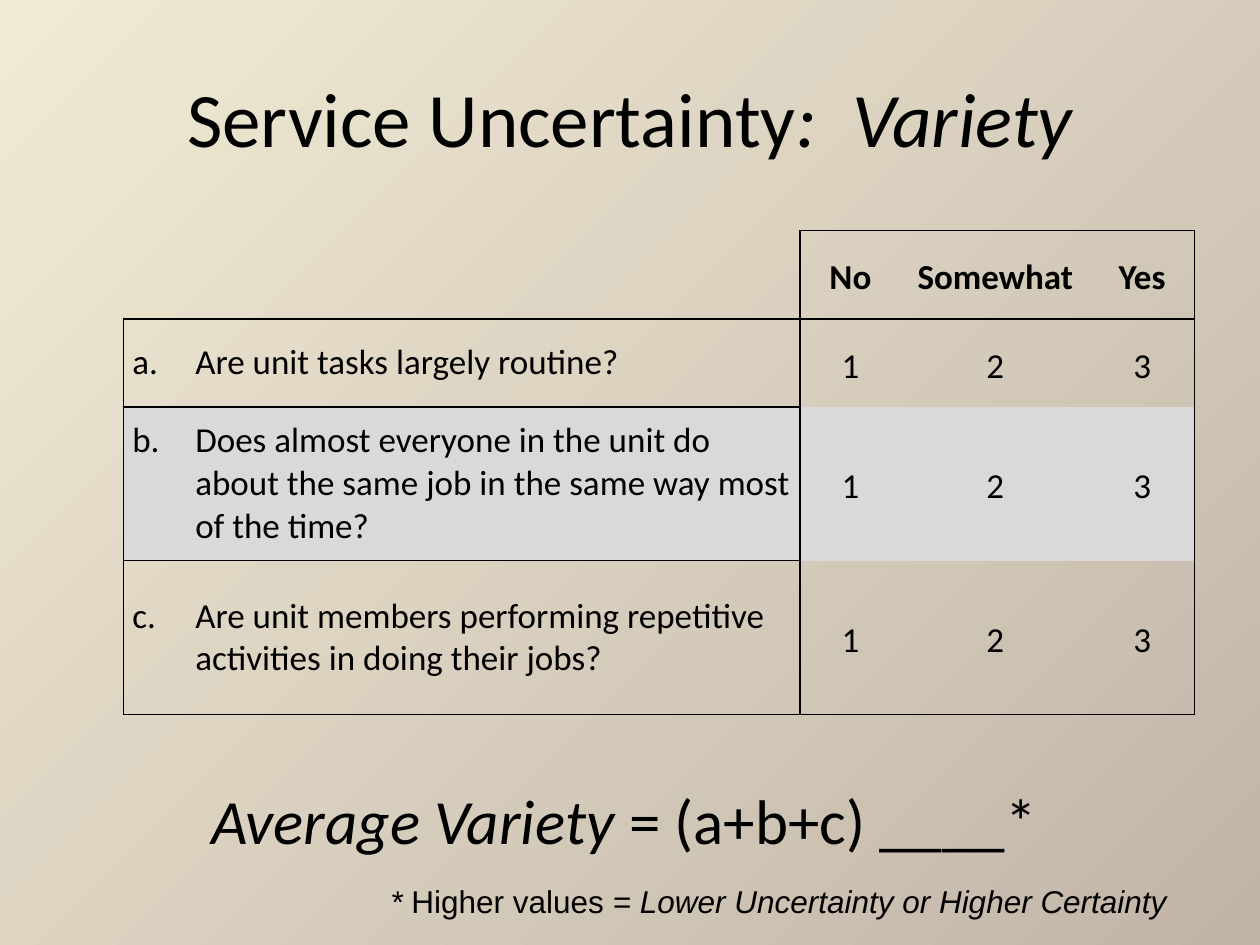
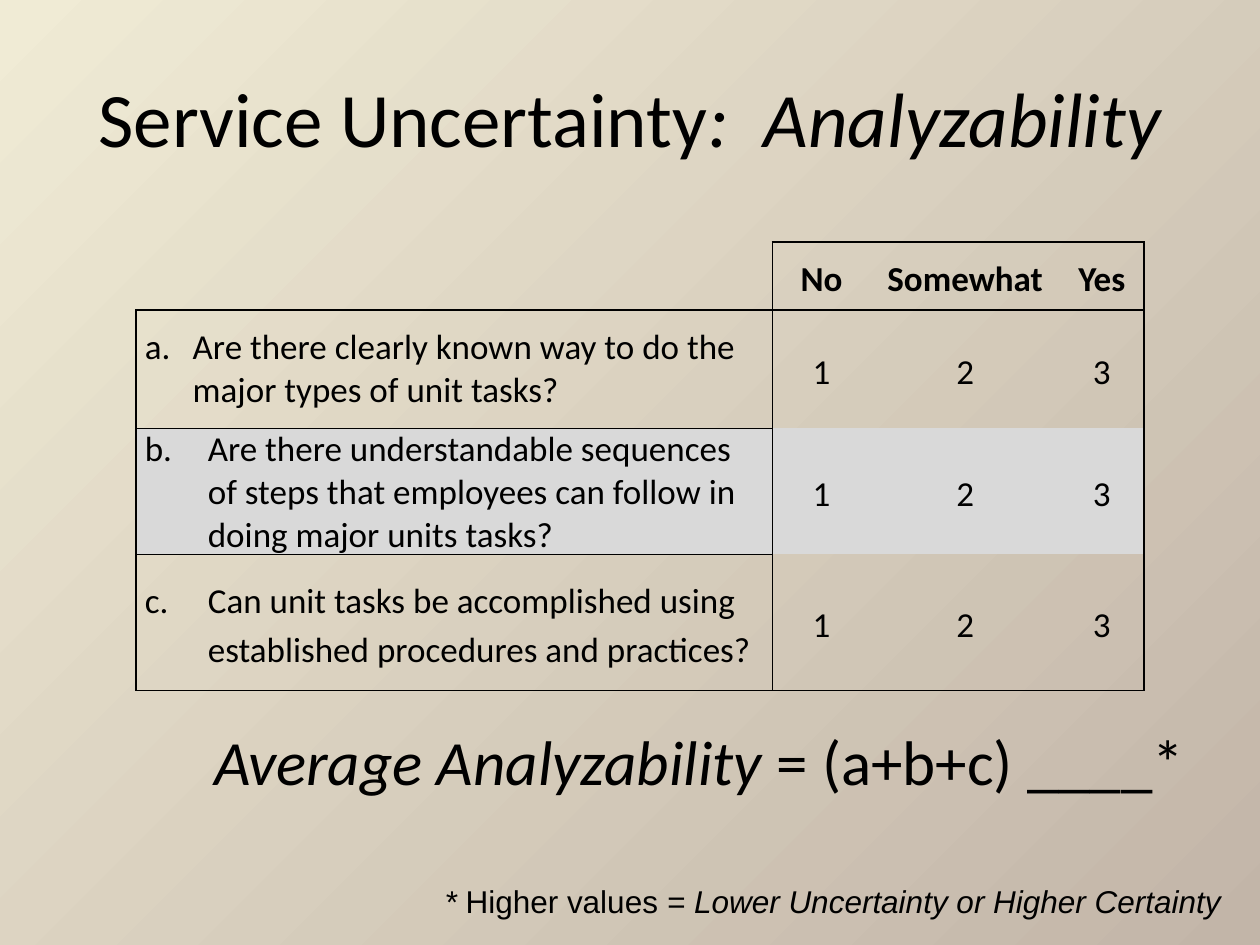
from lxml.etree import SubElement
from pptx import Presentation
from pptx.dml.color import RGBColor
from pptx.enum.text import MSO_ANCHOR, PP_ALIGN
from pptx.oxml.ns import qn
from pptx.util import Inches, Pt

BLACK = RGBColor(0x00, 0x00, 0x00)
BAND = RGBColor(0xD9, 0xD9, 0xD9)
TAUPE = RGBColor(0xC2, 0xB5, 0xA8)
CREAM = RGBColor(0xF0, 0xEB, 0xD5)

TITLE = {"name": "Calibri", "size": Pt(44)}
FORMULA = {"name": "Calibri", "size": Pt(36)}
FOOTNOTE = {"name": "Arial", "size": Pt(18)}
HEADING = {"name": "Calibri", "size": Pt(20), "bold": True}
BODY = HEADING | {"bold": False}

CELL_FORMAT = {"margin_left": Inches(0.07), "margin_right": Inches(0.07),
               "margin_top": 0, "margin_bottom": 0,
               "vertical_anchor": MSO_ANCHOR.MIDDLE}
ANSWERS = ["No", "Somewhat", "Yes"]

SCALES = [
    {
        "topic": "Variety",
        "table": (0.98, 1.83),
        "columns": [5.37, 0.8, 1.5, 0.83],
        "rows": [0.7, 0.7, 1.22, 1.22],
        "formula": (1.58, 6.15, 7.92, 0.71),
        "footnote": (3, 6.95, 6.5, 0.4),
        # question, hanging indent, line spacing
        "questions": [
            ("Are unit tasks largely routine?", 0.5, None),
            ("Does almost everyone in the unit do about the same job "
             "in the same way most of the time?", 0.5, None),
            ("Are unit members performing repetitive activities "
             "in doing their jobs?", 0.5, None),
        ],
    },
    {
        "topic": "Analyzability",
        "table": (1.08, 1.92),
        "columns": [5.05, 0.78, 1.5, 0.67],
        "rows": [0.54, 0.94, 0.94, 1.08],
        "formula": (1.6, 5.68, 7.92, 0.71),
        "footnote": (3.43, 6.95, 6.5, 0.4),
        "questions": [
            ("Are there clearly known way to do the major types "
             "of unit tasks?", 0.38, None),
            ("Are there understandable sequences of steps that employees "
             "can follow in doing major units tasks?", 0.5, None),
            ("Can unit tasks be accomplished using established procedures "
             "and practices?", 0.5, 1.15),
        ],
    },
]


def write_spans(para, spans, font_format):
    """Add (text, italic) spans that share one font format."""
    for text, italic in spans:
        span = para.add_run()
        span.text = text
        for name, value in font_format.items():
            setattr(span.font, name, value)
        span.font.italic = italic
        span.font.color.rgb = BLACK


def add_text(page, box, spans, font_format, align=PP_ALIGN.LEFT):
    frame = page.shapes.add_textbox(*map(Inches, box)).text_frame
    frame.word_wrap = True
    frame.vertical_anchor = MSO_ANCHOR.MIDDLE
    para = frame.paragraphs[0]
    para.alignment = align
    write_spans(para, spans, font_format)


def paint_background(page):
    fill = page.background.fill
    fill.gradient()
    fill.gradient_angle = 135
    for stop, color in zip(fill.gradient_stops, (TAUPE, CREAM)):
        stop.color.rgb = color


def visible_sides(row, column, last_row, last_column):
    """Frame each question fully, the answers only as a group."""
    if column == 0:
        return "RB" if row == 0 else "LRTB"
    rules = {"L": column == 1, "R": column == last_column,
             "T": row <= 1, "B": row in (0, last_row)}
    return [side for side, shown in rules.items() if shown]


def draw_borders(cell, sides):
    properties = cell._tc.get_or_add_tcPr()
    for side in "LRTB":
        line = SubElement(properties, qn(f"a:ln{side}"), w=str(Pt(1)))
        if side in sides:
            fill = SubElement(line, qn("a:solidFill"))
            SubElement(fill, qn("a:srgbClr"), val=str(BLACK))
        else:
            SubElement(line, qn("a:noFill"))


def write_question(para, number, question, indent, spacing):
    para.line_spacing = spacing
    properties = para._p.get_or_add_pPr()
    properties.set("marL", str(Inches(indent)))
    properties.set("indent", str(-Inches(indent)))
    SubElement(properties, qn("a:buAutoNum"),
               type="alphaLcPeriod", startAt=str(number))
    write_spans(para, [(question, False)], BODY)


def write_answer(para, text, font_format):
    para.alignment = PP_ALIGN.CENTER
    para.line_spacing = 1.15
    write_spans(para, [(text, False)], font_format)


def add_questionnaire(page, scale):
    columns, rows = scale["columns"], scale["rows"]
    box = (*scale["table"], sum(columns), sum(rows))
    table = page.shapes.add_table(len(rows), len(columns),
                                  *map(Inches, box)).table
    for column, width in zip(table.columns, columns):
        column.width = Inches(width)
    for row, height in zip(table.rows, rows):
        row.height = Inches(height)

    for r in range(len(rows)):
        for c in range(len(columns)):
            cell = table.cell(r, c)
            for name, value in CELL_FORMAT.items():
                setattr(cell, name, value)
            draw_borders(cell, visible_sides(r, c, len(rows) - 1,
                                             len(columns) - 1))
            if r == 2:
                cell.fill.solid()
                cell.fill.fore_color.rgb = BAND
            else:
                cell.fill.background()
            para = cell.text_frame.paragraphs[0]
            if c > 0 and r == 0:
                write_answer(para, ANSWERS[c - 1], HEADING)
            elif c > 0:
                write_answer(para, str(c), BODY)
            elif r > 0:
                write_question(para, r, *scale["questions"][r - 1])


def add_scale_page(deck, scale):
    page = deck.slides.add_slide(deck.slide_layouts[6])
    topic = scale["topic"]
    paint_background(page)
    add_text(page, (0.5, 0.3, 9, 1.25),
             [("Service Uncertainty", False), (f":  {topic}", True)],
             TITLE, PP_ALIGN.CENTER)
    add_questionnaire(page, scale)
    add_text(page, scale["formula"],
             [(f"Average {topic} ", True), ("= (a+b+c) ____*", False)],
             FORMULA)
    add_text(page, scale["footnote"],
             [("* ", True), ("Higher values ", False),
              ("= Lower Uncertainty or Higher Certainty", True)],
             FOOTNOTE)


def main():
    deck = Presentation()
    deck.slide_width, deck.slide_height = Inches(10), Inches(7.5)
    for scale in SCALES:
        add_scale_page(deck, scale)
    deck.save("out.pptx")


if __name__ == "__main__":
    main()
